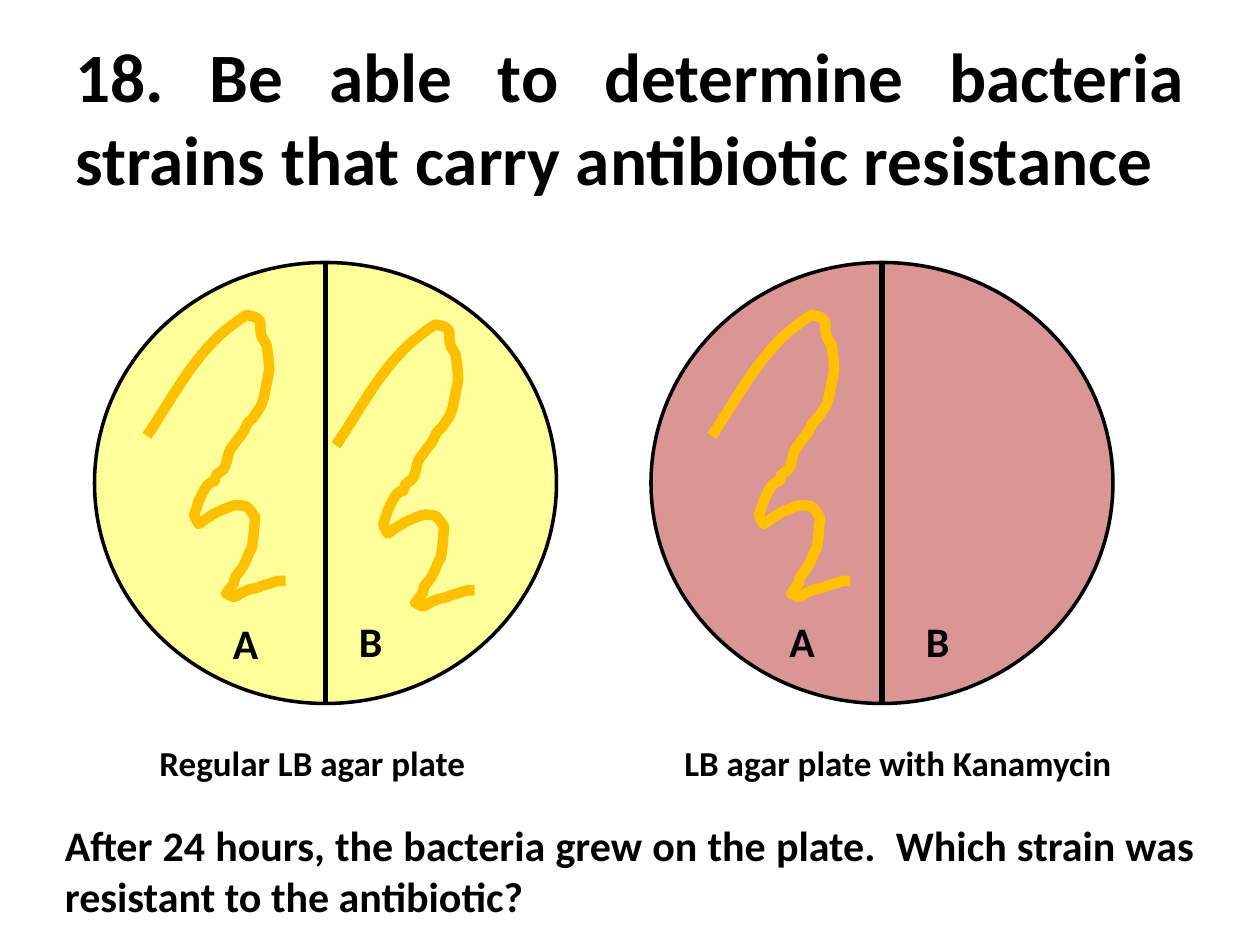
"""Build a slide comparing bacterial growth on two agar plates."""
from pptx import Presentation
from pptx.dml.color import RGBColor
from pptx.enum.shapes import MSO_CONNECTOR as Link, MSO_SHAPE as Preset
from pptx.enum.text import MSO_ANCHOR as Anchor, MSO_AUTO_SIZE as Fit, PP_ALIGN as Align
from pptx.oxml.ns import qn
from pptx.util import Inches, Pt
from lxml.etree import SubElement

COLORS = {"ink": "000000", "plain": "FFFF99", "kanamycin": "D99694", "growth": "FFC000"}
COLUMNS, ROWS = 120, 90
PLATE_TOP, PLATE_WIDTH, PLATE_HEIGHT = 25, 44, 42
STREAK_START = (0, 96)
STREAK_STROKES = [
    (19, 68, 34, 38, 59, 15), (70, 6, 70, 6, 79, 0), (82, 1, 86, 1, 88, 3),
    (90, 4, 90, 6, 90, 7), (90, 10, 90, 14, 91, 17), (92, 19, 94, 22, 95, 24),
    (96, 31, 97, 37, 97, 44), (96, 51, 94, 58, 93, 65), (92, 68, 91, 71, 90, 73),
    (88, 76, 86, 79, 84, 82), (83, 83, 81, 84, 80, 86), (79, 88, 78, 90, 77, 92),
    (75, 96, 72, 98, 69, 103), (68, 104, 67, 106, 66, 107), (63, 113, 64, 121, 59, 124),
    (55, 127), (52, 137, 56, 128, 48, 135), (46, 137, 41, 148, 41, 148),
    (37, 162, 36, 156, 41, 166), (47, 162, 52, 158, 59, 155), (67, 152, 63, 153, 70, 151),
    (73, 151, 76, 151, 79, 152), (81, 153, 84, 158, 86, 161), (85, 167, 85, 174, 84, 180),
    (84, 183, 83, 186, 81, 189), (76, 202, 76, 200, 70, 208), (70, 210, 69, 211, 69, 213),
    (67, 216, 63, 221, 63, 221), (73, 226, 66, 224, 81, 218), (85, 217, 88, 217, 91, 215),
    (107, 211, 99, 211, 110, 211),
]


def color(name):
    return RGBColor.from_string(COLORS[name])


def write(frame, text, size=24, align=Align.LEFT, anchor=Anchor.TOP, fit=Fit.SHAPE_TO_FIT_TEXT):
    frame.word_wrap = True
    frame.auto_size = fit
    frame.vertical_anchor = anchor
    paragraph = frame.paragraphs[0]
    paragraph.alignment = align
    run = paragraph.add_run()
    run.text = text
    run.font.name, run.font.size, run.font.bold = "Calibri", Pt(size), True
    run.font.color.rgb = color("ink")


def bend(outline, strokes):
    """Join each three line ends of a curved stroke into one Bézier curve."""
    ends = iter(list(outline.iter(qn("a:lnTo"))))
    for stroke in strokes:
        first, *others = [next(ends) for _ in range(len(stroke) // 2)]
        if others:
            first.tag = qn("a:cubicBezTo")
        for end in others:
            first.append(end[0])
            end.getparent().remove(end)


class PlateSlide:
    def __init__(self, deck):
        self.slide = deck.slides.add_slide(deck.slide_layouts[5])
        self.shapes = self.slide.shapes
        self.column = deck.slide_width / COLUMNS
        self.row = deck.slide_height / ROWS

    def place(self, left, top, width, height):
        return [round(length * unit) for length, unit in
                zip((left, top, width, height), (self.column, self.row) * 2)]

    def outline(self, part, name, width):
        part.line.color.rgb = color(name)
        part.line.width = Pt(width)

    def title(self, text, *box):
        heading = self.shapes.title
        heading.left, heading.top, heading.width, heading.height = self.place(*box)
        write(heading.text_frame, text, size=39.6, align=Align.JUSTIFY,
              anchor=Anchor.MIDDLE, fit=Fit.NONE)

    def text(self, text, *box, **style):
        write(self.shapes.add_textbox(*self.place(*box)).text_frame, text, **style)

    def plate(self, left, fill):
        dish = self.shapes.add_shape(
            Preset.FLOWCHART_CONNECTOR, *self.place(left, PLATE_TOP, PLATE_WIDTH, PLATE_HEIGHT))
        dish.shadow.inherit = False
        dish.fill.solid()
        dish.fill.fore_color.rgb = color(fill)
        self.outline(dish, "ink", 2)

    def divider(self, left):
        middle = left + PLATE_WIDTH / 2
        ends = self.place(middle, PLATE_TOP, middle, PLATE_TOP + PLATE_HEIGHT)
        divider = self.shapes.add_connector(Link.STRAIGHT, *ends)
        self.outline(divider, "ink", 3)
        SubElement(divider._element.spPr, qn("a:effectLst"))

    def streak(self, left, top):
        builder = self.shapes.build_freeform(*STREAK_START, scale=Inches(0.01))
        points = [pair for stroke in STREAK_STROKES for pair in zip(stroke[::2], stroke[1::2])]
        builder.add_line_segments(points, close=False)
        growth = builder.convert_to_shape(*self.place(left, top, 0, 0)[:2])
        bend(growth._element, STREAK_STROKES)
        growth.shadow.inherit = False
        growth.fill.background()
        self.outline(growth, "growth", 6)


def main():
    deck = Presentation()
    deck.slide_width, deck.slide_height = Inches(10), Inches(7.5)
    page = PlateSlide(deck)
    page.title("18. Be able to determine bacteria strains that carry antibiotic resistance",
               6, 3.6, 108, 15)
    plates = [(9, "plain"), (62, "kanamycin")]
    for left, fill in plates:
        page.plate(left, fill)
    for left, _ in plates:
        page.divider(left)
    page.text("Regular LB agar plate", 14, 70, 40, 5.25, size=20)
    page.text("LB agar plate with Kanamycin", 64, 70, 47, 5.25, size=20)
    for strain, left, top in [("A", 21, 58.2), ("B", 33, 58), ("A", 74, 58), ("B", 87, 58)]:
        page.text(strain, left, top, 9, 6)
    for left, top in [(14, 30), (32, 30.9), (67.8, 30)]:
        page.streak(left, top)
    page.text("After 24 hours, the bacteria grew on the plate.  "
              "Which strain was resistant to the antibiotic?",
              5, 77.5, 110, 10.9, align=Align.JUSTIFY)
    deck.save("out.pptx")


if __name__ == "__main__":
    main()
